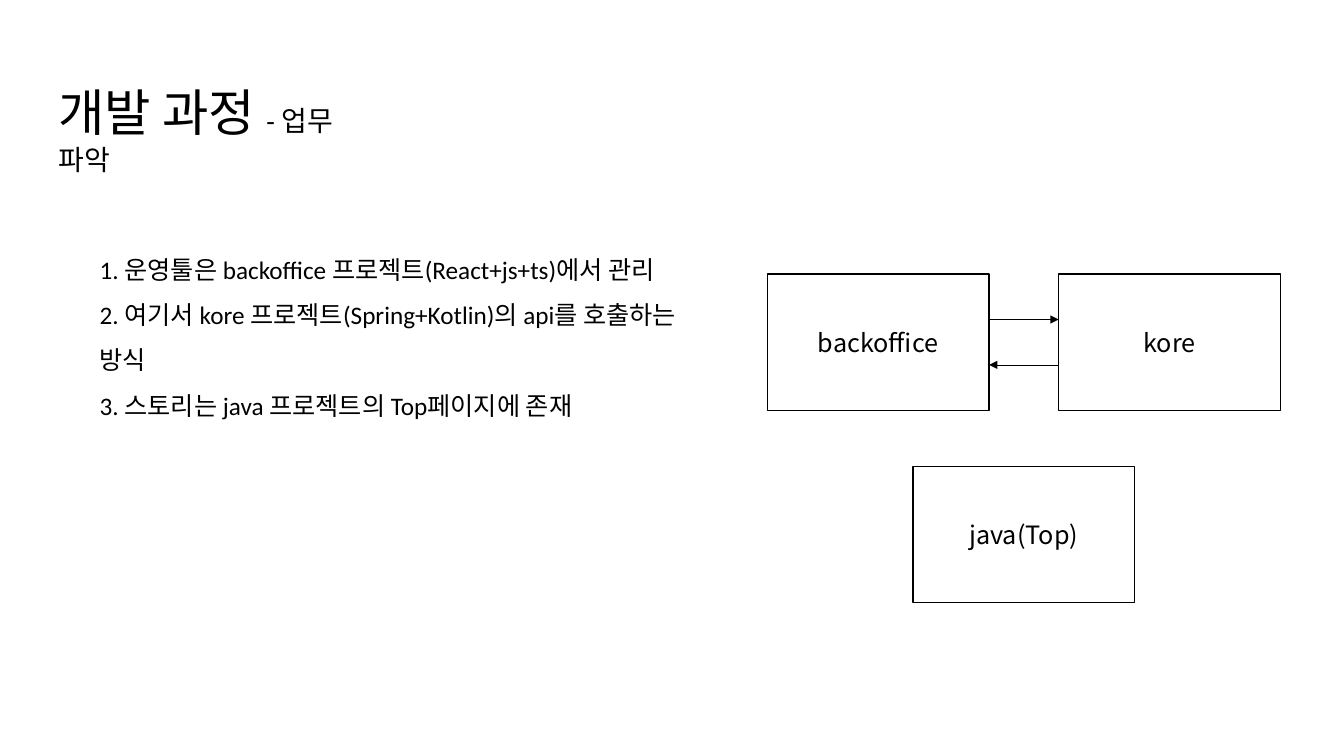
from lxml import etree
from pptx import Presentation
from pptx.dml.color import RGBColor
from pptx.enum.shapes import MSO_CONNECTOR, MSO_SHAPE
from pptx.enum.text import MSO_ANCHOR, MSO_AUTO_SIZE, PP_ALIGN
from pptx.oxml.ns import qn
from pptx.util import Inches, Pt

RECTANGLE = MSO_SHAPE.RECTANGLE
STRAIGHT = MSO_CONNECTOR.STRAIGHT
MIDDLE = MSO_ANCHOR.MIDDLE
CENTER = PP_ALIGN.CENTER
GROW = MSO_AUTO_SIZE.SHAPE_TO_FIT_TEXT

PAGE_WIDTH, PAGE_HEIGHT = 13.33, 7.5
COLORS = {"ink": "000000", "paper": "FFFFFF"}
TEXT_FONT, BOX_FONT = "Calibri", "Noto Sans CJK KR"
BOX_WIDTH, BOX_HEIGHT, COLUMN_GAP, ROW_GAP = 2.2, 1.35, 0.69, 0.56
STEPS = [
    "1. 운영툴은 backoffice 프로젝트(React+js+ts)에서 관리",
    "2. 여기서 kore 프로젝트(Spring+Kotlin)의 api를 호출하는 방식",
    "3. 스토리는 java 프로젝트의 Top페이지에 존재",
]


def color(name):
    """Return the named colour."""
    return RGBColor.from_string(COLORS[name])


def set_font(font, name, size):
    """Apply a typeface, a size and the ink colour."""
    font.name, font.size = name, Pt(size)
    font.color.rgb = color("ink")


def add_text_frame(slide, box):
    """Add a wrapping text box and return its frame."""
    frame = slide.shapes.add_textbox(*map(Inches, box)).text_frame
    frame.word_wrap = True
    frame.auto_size = GROW
    return frame


def add_title(slide, box):
    """Write the large heading and its smaller subtitle on one paragraph."""
    para = add_text_frame(slide, box).paragraphs[0]
    for text, size in (("개발 과정 ", 36), ("- 업무 파악", 20)):
        span = para.add_run()
        span.text = text
        set_font(span.font, TEXT_FONT, size)


def add_steps(slide, box):
    """Write the numbered steps with open line spacing."""
    frame = add_text_frame(slide, box)
    frame.text = "\n".join(STEPS)
    for para in frame.paragraphs:
        para.line_spacing = 1.5
        set_font(para.font, TEXT_FONT, 18)


def add_project(shapes, label, left, top):
    """Draw one labelled project box."""
    box = shapes.add_shape(
        RECTANGLE, *map(Inches, (left, top, BOX_WIDTH, BOX_HEIGHT)))
    box.shadow.inherit = False
    box.fill.solid()
    box.fill.fore_color.rgb = color("paper")
    box.line.color.rgb = color("ink")
    box.line.width = Pt(1)
    box.text_frame.vertical_anchor = MIDDLE
    para = box.text_frame.paragraphs[0]
    para.text = label
    para.alignment = CENTER
    set_font(para.font, BOX_FONT, 18)


def add_arrow(shapes, start, end, height):
    """Draw a level arrow from start to end."""
    arrow = shapes.add_connector(
        STRAIGHT, *map(Inches, (start, height, end, height)))
    arrow.line.color.rgb = color("ink")
    arrow.line.width = Pt(0.5)
    line = arrow.line._get_or_add_ln()
    etree.SubElement(line, qn("a:tailEnd"), type="triangle")
    etree.SubElement(arrow._element.spPr, qn("a:effectLst"))


def add_diagram(slide, left, top):
    """Place two linked projects with a third centred below them."""
    step = BOX_WIDTH + COLUMN_GAP
    start, end = left + BOX_WIDTH, left + step
    linked = slide.shapes.add_group_shape().shapes
    add_project(linked, "backoffice", left, top)
    add_project(linked, "kore", end, top)
    add_arrow(linked, start, end, top + BOX_HEIGHT / 3)
    add_arrow(linked, end, start, top + BOX_HEIGHT * 2 / 3)
    add_project(slide.shapes, "java(Top)", left + step / 2,
                top + BOX_HEIGHT + ROW_GAP)


def main():
    """Build and save the deck."""
    deck = Presentation()
    deck.slide_width = Inches(PAGE_WIDTH)
    deck.slide_height = Inches(PAGE_HEIGHT)
    page = deck.slides.add_slide(deck.slide_layouts[6])
    add_title(page, (0.48, 0.76, 3.33, 0.71))
    add_steps(page, (0.89, 2.32, 6.3, 1.41))
    add_diagram(page, 7.61, 2.72)
    deck.save("out.pptx")


if __name__ == "__main__":
    main()
